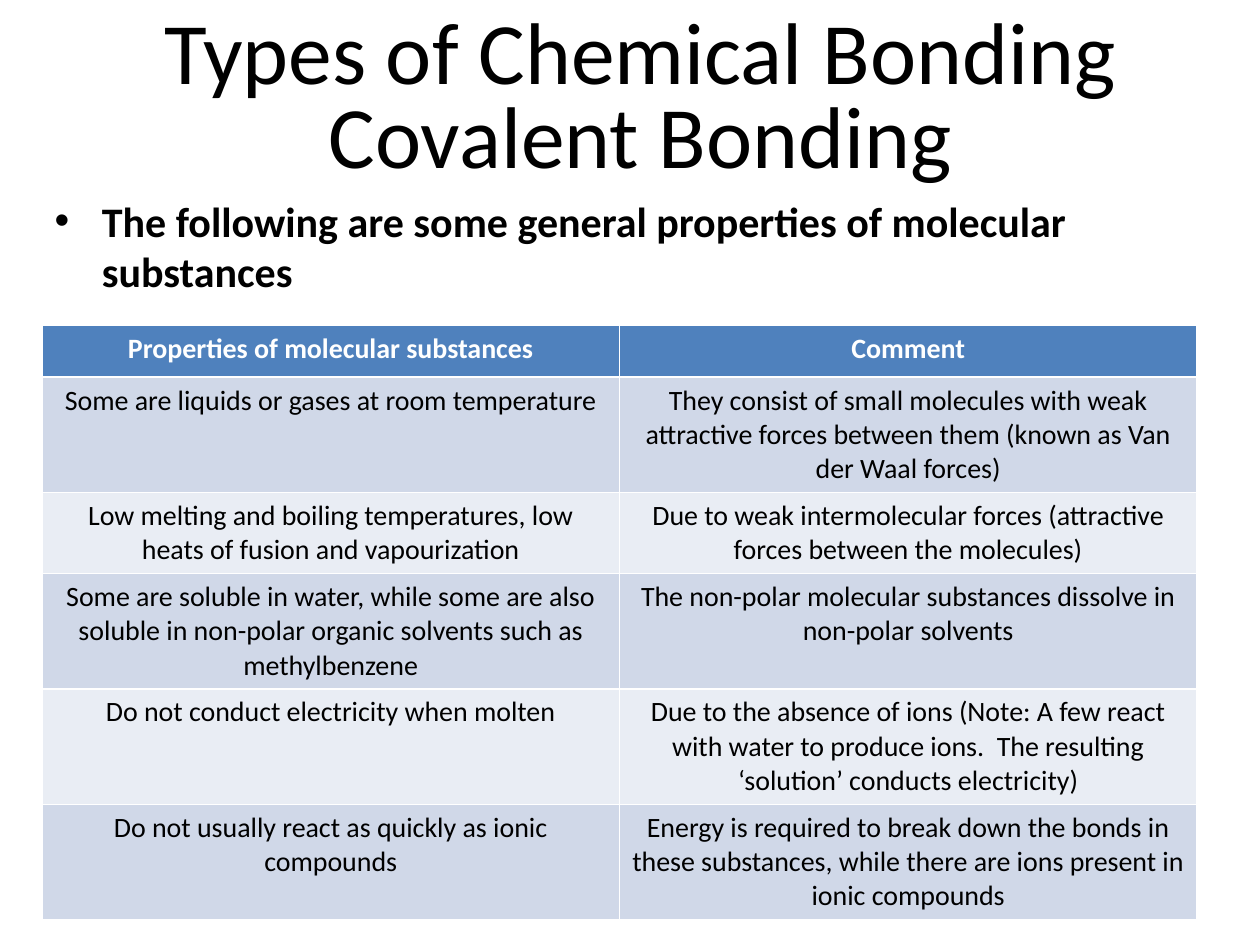
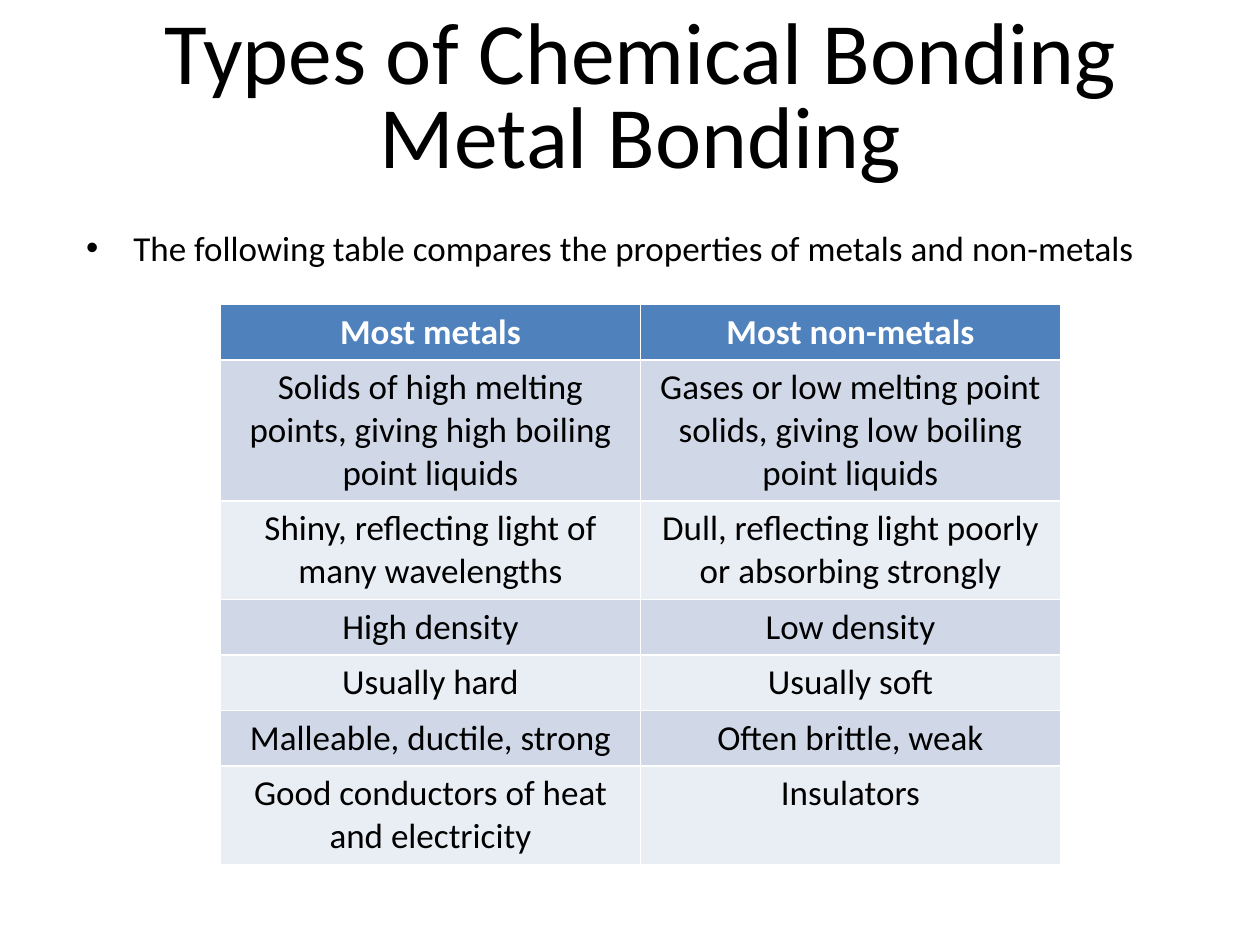
"""Build two slides with property tables on covalent and metal bonding."""
from pptx import Presentation
from pptx.dml.color import RGBColor
from pptx.enum.text import MSO_ANCHOR, MSO_AUTO_SIZE, PP_ALIGN
from pptx.util import Inches, Pt

COLORS = {"text": "000000", "head_text": "FFFFFF", "head": "4F81BD",
          "odd": "D0D8E8", "even": "E9EDF4"}
FONT = "Calibri"
MIN_ROW = 0.41
CELL_PADDING = 0.1
LINE_HEIGHT = 1.22

prs = Presentation()
prs.slide_width, prs.slide_height = Inches(10), Inches(7.5)
UNIT = prs.slide_width / 120


def place(sp, left, top, width, height):
    """Set a shape's box in grid units."""
    sp.left, sp.top, sp.width, sp.height = (
        round(n * UNIT) for n in (left, top, width, height))


def style(p, size, color, bold=False):
    """Set the font of a whole paragraph."""
    p.font.name, p.font.size, p.font.bold = FONT, Pt(size), bold
    p.font.color.rgb = RGBColor.from_string(COLORS[color])


SLIDES = [
    {
        "topic": "Covalent Bonding",
        "intro": "The following are some general properties of molecular substances",
        "intro_box": (4, 18, 111, 72), "intro_size": 24, "intro_bold": True,
        "table_box": (4, 31, 110), "table_size": 16,
        "rows": [
            (1, "Properties of molecular substances", "Comment"),
            (3, "Some are liquids or gases at room temperature",
             "They consist of small molecules with weak attractive forces "
             "between them (known as Van der Waal forces)"),
            (2, "Low melting and boiling temperatures, low heats of fusion "
             "and vapourization",
             "Due to weak intermolecular forces (attractive forces between "
             "the molecules)"),
            (3, "Some are soluble in water, while some are also soluble in "
             "non-polar organic solvents such as methylbenzene",
             "The non-polar molecular substances dissolve in non-polar solvents"),
            (3, "Do not conduct electricity when molten",
             "Due to the absence of ions (Note: A few react with water to "
             "produce ions.  The resulting ‘solution’ conducts electricity)"),
            (3, "Do not usually react as quickly as ionic compounds",
             "Energy is required to break down the bonds in these substances, "
             "while there are ions present in ionic compounds"),
        ],
    },
    {
        "topic": "Metal Bonding",
        "intro": "The following table compares the properties of metals and non-metals",
        "intro_box": (7, 21, 104, 69), "intro_size": 20, "intro_bold": False,
        "table_box": (21, 29, 80), "table_size": 20,
        "rows": [
            (1, "Most metals", "Most non-metals"),
            (3, "Solids of high melting points, giving high boiling point liquids",
             "Gases or low melting point solids, giving low boiling point liquids"),
            (2, "Shiny, reflecting light of many wavelengths",
             "Dull, reflecting light poorly or absorbing strongly"),
            (1, "High density", "Low density"),
            (1, "Usually hard", "Usually soft"),
            (1, "Malleable, ductile, strong", "Often brittle, weak"),
            (2, "Good conductors of heat and electricity", "Insulators"),
        ],
    },
]

for data in SLIDES:
    s = prs.slides.add_slide(prs.slide_layouts[1])

    title, body = s.placeholders
    place(title, 10, 0, 102, 19.33)
    tf = title.text_frame
    tf.text = "Types of Chemical Bonding\v" + data["topic"]
    tf.auto_size, tf.vertical_anchor = MSO_AUTO_SIZE.NONE, MSO_ANCHOR.MIDDLE
    p = tf.paragraphs[0]
    p.alignment, p.line_spacing = PP_ALIGN.CENTER, 0.8
    style(p, 50, "text")

    place(body, *data["intro_box"])
    tf = body.text_frame
    tf.text = data["intro"]
    tf.auto_size = MSO_AUTO_SIZE.NONE
    style(tf.paragraphs[0], data["intro_size"], "text", data["intro_bold"])

    left, top, width = (round(n * UNIT) for n in data["table_box"])
    rows, size = data["rows"], data["table_size"]
    table = s.shapes.add_table(len(rows), 2, left, top, width,
                               Inches(MIN_ROW * len(rows))).table
    for i, (lines, *texts) in enumerate(rows):
        needed = lines * size * LINE_HEIGHT / 72 + CELL_PADDING
        table.rows[i].height = Inches(max(MIN_ROW, needed))
        band = "head" if i == 0 else "odd" if i % 2 else "even"
        for j, text in enumerate(texts):
            cell = table.cell(i, j)
            cell.text = text
            cell.fill.solid()
            cell.fill.fore_color.rgb = RGBColor.from_string(COLORS[band])
            p = cell.text_frame.paragraphs[0]
            p.alignment = PP_ALIGN.CENTER
            style(p, size, "head_text" if i == 0 else "text", i == 0)

prs.save("out.pptx")
